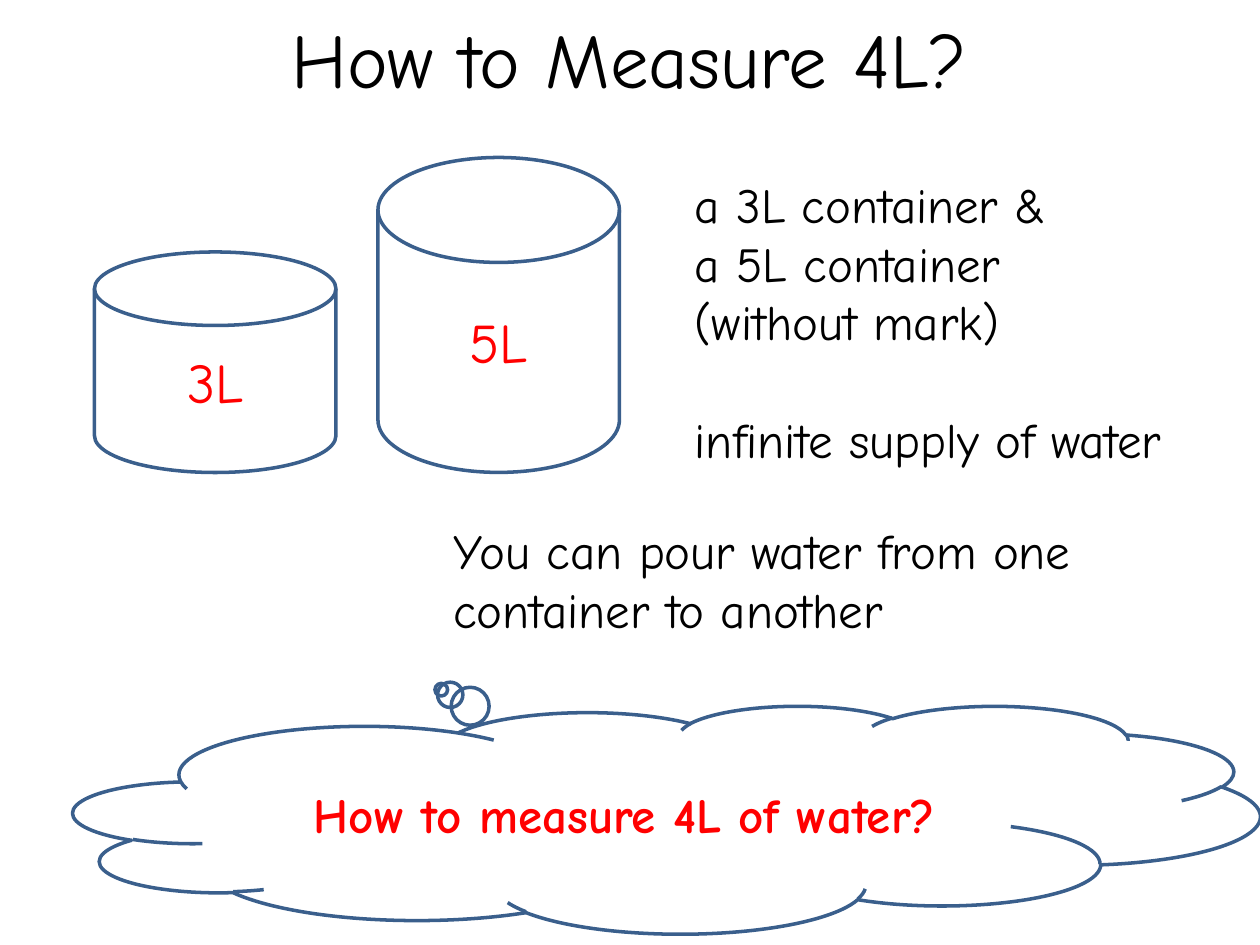
from collections import namedtuple

from pptx import Presentation
from pptx.dml.color import RGBColor
from pptx.enum.shapes import MSO_SHAPE
from pptx.enum.text import MSO_ANCHOR, PP_ALIGN
from pptx.util import Inches, Pt

Box = namedtuple("Box", "left top width height")

WIDTH, HEIGHT = Inches(10), Inches(7.5)
COLUMNS, ROWS = 120, 90
FONT = "Comic Neue"
BLACK, RED, OUTLINE = "000000", "FF0000", "3A5F8C"


def color(hex_code):
    """Turn a hex string into a colour."""
    return RGBColor.from_string(hex_code)


def place(box):
    """Convert a box in grid columns and rows to slide lengths."""
    column, row = WIDTH / COLUMNS, HEIGHT / ROWS
    return [round(length * unit) for length, unit in zip(box, (column, row) * 2)]


def write(frame, text, size=28, ink=BLACK, bold=None, align=PP_ALIGN.LEFT,
          anchor=MSO_ANCHOR.TOP, wrap=True, before=()):
    """Write one paragraph per line, with optional space before each."""
    frame.word_wrap = wrap
    frame.vertical_anchor = anchor
    for index, line in enumerate(text.split("\n")):
        paragraph = frame.add_paragraph() if index else frame.paragraphs[0]
        paragraph.alignment = align
        if index < len(before):
            paragraph.space_before = Pt(before[index])
        run = paragraph.add_run()
        run.text = line
        run.font.name, run.font.size, run.font.bold = FONT, Pt(size), bold
        run.font.color.rgb = color(ink)


def add_text(slide, box, text, **style):
    """Add a text box that fills the given box."""
    write(slide.shapes.add_textbox(*place(box)).text_frame, text, **style)


def add_outline(slide, preset, box, text, **style):
    """Add an unfilled outlined shape with a centred red label."""
    shape = slide.shapes.add_shape(preset, *place(box))
    shape.shadow.inherit = False
    shape.fill.background()
    shape.line.color.rgb = color(OUTLINE)
    shape.line.width = Pt(2)
    write(shape.text_frame, text, ink=RED, align=PP_ALIGN.CENTER,
          anchor=MSO_ANCHOR.MIDDLE, **style)
    return shape


def add_title(slide, box):
    """Place the centred heading."""
    add_text(slide, box, "How to Measure 4L?", size=44,
             align=PP_ALIGN.CENTER, anchor=MSO_ANCHOR.MIDDLE)


def add_containers(slide, box):
    """Stand the two containers on the bottom edge of the box."""
    width = box.width * 0.46
    for label, shift, share in (("3L", 0, 0.7), ("5L", box.width - width, 1)):
        height = box.height * share
        container = Box(box.left + shift, box.top + box.height - height, width, height)
        add_outline(slide, MSO_SHAPE.FLOWCHART_MAGNETIC_DISK, container, label, size=32)


def add_supplies(slide, box):
    """List what is available, with a gap before the water."""
    add_text(slide, box, "a 3L container &\na 5L container\n(without mark)\n"
             "infinite supply of water", wrap=False, before=(0, 0, 0, 33.5))


def add_rule(slide, box):
    """State the permitted move."""
    add_text(slide, box, "You can pour water from one container to another", before=(6,))


def add_question(slide, box):
    """Ask the question in a thought cloud with its tail to the upper left."""
    cloud = add_outline(slide, MSO_SHAPE.CLOUD_CALLOUT, box,
                        "How to measure 4L of water?", bold=True)
    cloud.adjustments[0], cloud.adjustments[1] = -0.19, -0.57


def main():
    """Build and save the slide."""
    presentation = Presentation()
    presentation.slide_width, presentation.slide_height = WIDTH, HEIGHT
    slide = presentation.slides.add_slide(presentation.slide_layouts[6])
    add_title(slide, Box(6, -2, 108, 15))
    add_rule(slide, Box(42, 49, 74, 12.5))
    add_supplies(slide, Box(65, 16, 54, 29.5))
    add_question(slide, Box(7, 67.2, 113, 21.7))
    add_containers(slide, Box(9, 15, 50, 30))
    presentation.save("out.pptx")


if __name__ == "__main__":
    main()
